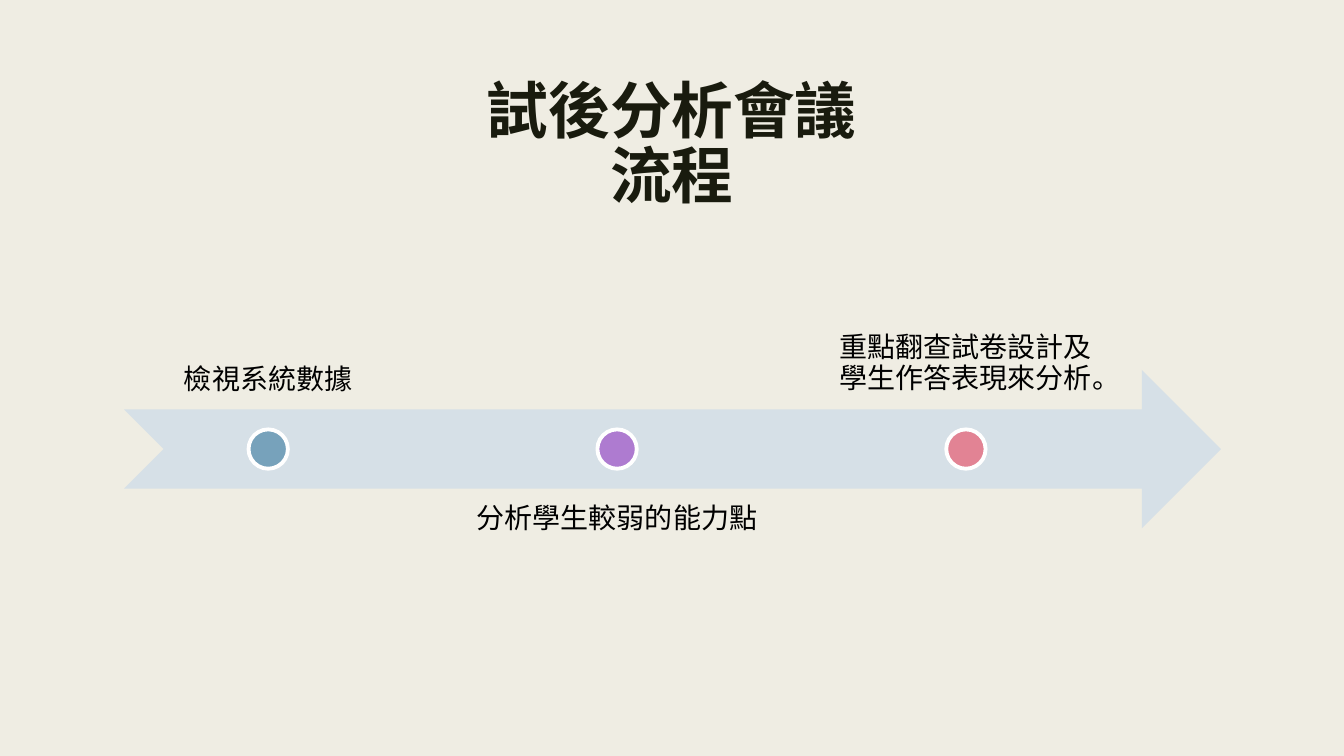
from pptx import Presentation
from pptx.dml.color import RGBColor
from pptx.enum.shapes import MSO_SHAPE
from pptx.enum.text import MSO_ANCHOR, PP_ALIGN
from pptx.util import Inches, Pt

ARROW, DOT = MSO_SHAPE.NOTCHED_RIGHT_ARROW, MSO_SHAPE.OVAL
TOP, BOTTOM = MSO_ANCHOR.TOP, MSO_ANCHOR.BOTTOM
CENTER = PP_ALIGN.CENTER

# Content
TITLE = "試後分析會議\v流程"
STEPS = [  # label, label width, dot colour
    ("檢視系統數據", 2.87, "77A2BB"),
    ("分析學生較弱的能力點", 3.76, "AE7BD0"),
    ("重點翻查試卷設計及學生作答表現來分析。", 2.87, "E28394"),
]
BACKGROUND, ARROW_COLOR, WHITE = "EFEDE3", "D6E0E7", "FFFFFF"
TITLE_FONT = {"name": "Lato", "size": Pt(44), "bold": True}
LABEL_FONT = {"name": "Lato", "size": Pt(20), "bold": False}

# Layout, in inches
ARROW_LEFT, ARROW_TOP, ARROW_WIDTH, BAND = 1.23, 3.67, 10.88, 1.57
FIRST_CENTER, STEP_GAP, DOT_SIZE = 2.66, 3.46, 0.39
LABEL_TOPS = {BOTTOM: 2.5, TOP: 4.85}


def color(hex_value):
    return RGBColor.from_string(hex_value)


def add_text(slide, text, box, font, font_color, spacing, anchor, insets):
    shape = slide.shapes.add_textbox(*map(Inches, box))
    frame = shape.text_frame
    frame.word_wrap = True
    frame.vertical_anchor = anchor
    horizontal, vertical = map(Inches, insets)
    frame.margin_left = frame.margin_right = horizontal
    frame.margin_top = frame.margin_bottom = vertical
    paragraph = frame.paragraphs[0]
    paragraph.text = text
    paragraph.alignment = CENTER
    paragraph.line_spacing = spacing
    for run in paragraph.runs:
        for name, value in font.items():
            setattr(run.font, name, value)
        run.font.color.rgb = color(font_color)


def add_shape(slide, kind, box, fill):
    shape = slide.shapes.add_shape(kind, *map(Inches, box))
    shape.shadow.inherit = False
    shape.fill.solid()
    shape.fill.fore_color.rgb = color(fill)
    shape.line.fill.background()
    return shape


def main():
    presentation = Presentation()
    presentation.slide_width, presentation.slide_height = Inches(13.33), Inches(7.5)
    slide = presentation.slides.add_slide(presentation.slide_layouts[6])
    slide.background.fill.solid()
    slide.background.fill.fore_color.rgb = color(BACKGROUND)

    # Title and timeline arrow
    add_text(slide, TITLE, (0.7, 0.75, 11.93, 1.62), TITLE_FONT, "191B0E",
             0.89, TOP, (0.1, 0.05))
    add_shape(slide, ARROW, (ARROW_LEFT, ARROW_TOP, ARROW_WIDTH, BAND), ARROW_COLOR)

    # Steps, with labels alternating above and below the arrow
    for index, (label, width, dot_color) in enumerate(STEPS):
        center = FIRST_CENTER + index * STEP_GAP
        anchor = TOP if index % 2 else BOTTOM
        add_text(slide, label, (center - width / 2, LABEL_TOPS[anchor], width, BAND),
                 LABEL_FONT, "000000", 0.9, anchor, (0.16, 0.16))
        dot_top = ARROW_TOP + (BAND - DOT_SIZE) / 2
        dot = add_shape(slide, DOT, (center - DOT_SIZE / 2, dot_top, DOT_SIZE, DOT_SIZE),
                        dot_color)
        dot.line.color.rgb = color(WHITE)
        dot.line.width = Pt(2.75)

    presentation.save("out.pptx")


if __name__ == "__main__":
    main()
